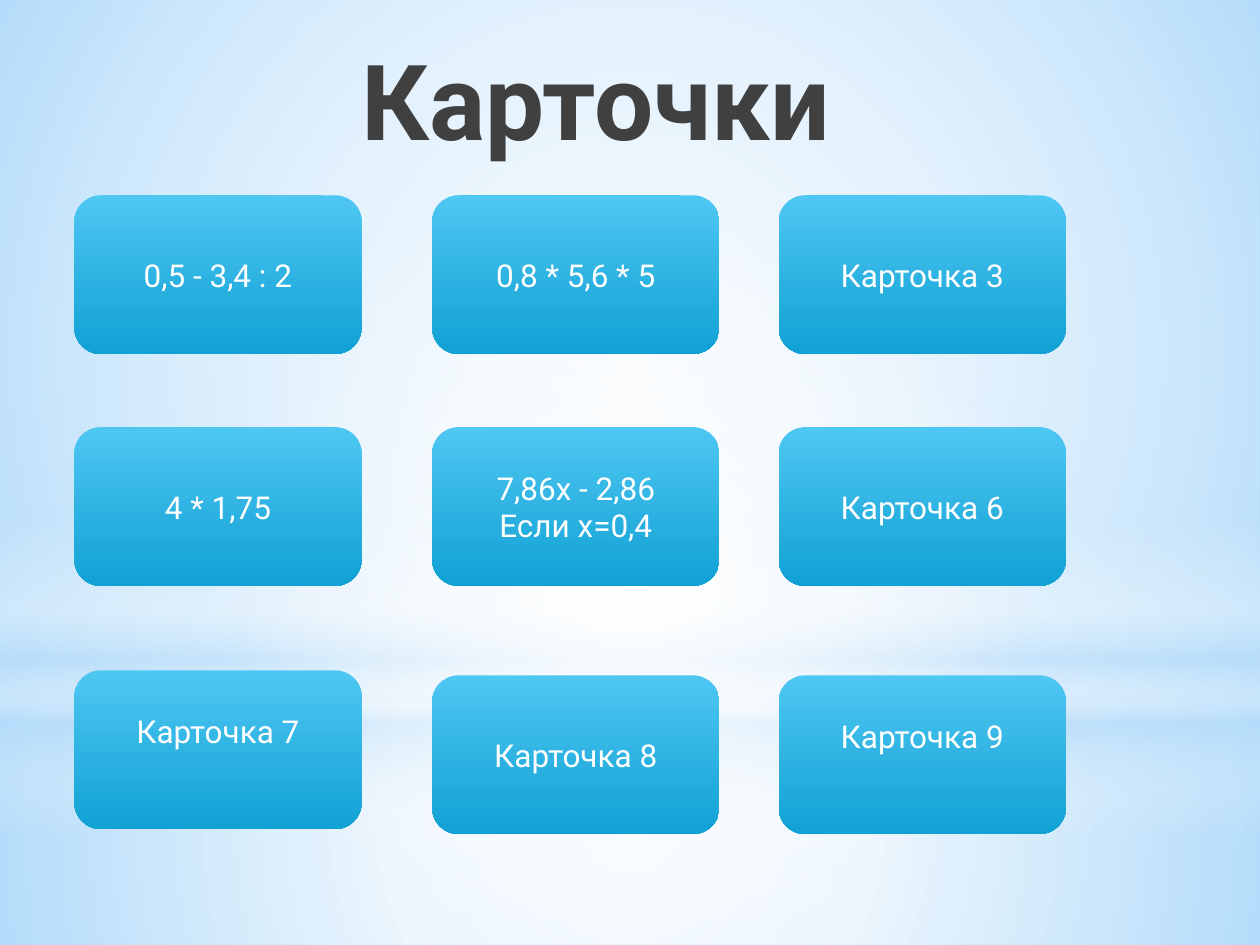
"""Build the slide of nine arithmetic cards on a glowing blue background."""
from dataclasses import dataclass
from typing import Optional

from lxml import etree
from pptx import Presentation
from pptx import util as u
from pptx.dml.color import RGBColor
from pptx.enum import shapes, text
from pptx.oxml.ns import qn


@dataclass(frozen=True)
class Theme:
    font: str = "Roboto"
    title_size: int = 60
    card_size: int = 18
    sky: str = "B4DCFA"
    white: str = "FFFFFF"
    title: str = "404040"
    card_top: str = "4EC7F2"
    card_bottom: str = "11A1D4"


@dataclass(frozen=True)
class Stop:
    position: int
    color: str
    opacity: int = 100


@dataclass(frozen=True)
class Gradient:
    stops: tuple[Stop, ...]
    angle: Optional[int] = None


@dataclass(frozen=True)
class Box:
    left: float
    top: float
    width: float
    height: float

    def lengths(self) -> tuple[u.Length, ...]:
        return tuple(u.Inches(n) for n in (self.left, self.top, self.width, self.height))


@dataclass(frozen=True)
class Glow:
    box: Box
    gradient: Gradient
    outline: shapes.MSO_SHAPE = shapes.MSO_SHAPE.RECTANGLE


@dataclass(frozen=True)
class Card:
    wording: str
    lift: float = 0
    bottom_inset: float = 0.05


THEME = Theme()
CARD_FILL = Gradient((Stop(0, THEME.card_top), Stop(100, THEME.card_bottom)), 90)
GLOWS = (
    Glow(Box(0, 5.58, 10, 1.92), Gradient((
        Stop(0, THEME.white, 91), Stop(37, THEME.white, 76), Stop(100, THEME.sky, 79)))),
    Glow(Box(0, 0, 10, 5.58), Gradient((
        Stop(0, THEME.white, 89), Stop(48, THEME.white, 62), Stop(100, THEME.sky, 79)))),
    Glow(Box(0, 4.12, 10, 2.5), Gradient((
        Stop(0, THEME.white, 0), Stop(29, THEME.white, 30), Stop(45, THEME.sky, 40),
        Stop(55, THEME.white, 26), Stop(65, THEME.sky, 60), Stop(100, THEME.white, 0)), 90)),
    Glow(Box(0, 1.75, 10, 5.58), Gradient((
        Stop(0, THEME.white), Stop(56, THEME.white, 0))), shapes.MSO_SHAPE.OVAL),
)
COLUMNS = (0.59, 3.43, 6.18)
ROWS = (1.55, 3.39, 5.36)
CARDS = (
    (Card("0,5 - 3,4 : 2"), Card("0,8 * 5,6 * 5"), Card("Карточка 3")),
    (Card("4 * 1,75"), Card("7,86x - 2,86\nЕсли x=0,4"), Card("Карточка 6")),
    (Card("Карточка 7", 0.04, 0.35), Card("Карточка 8"), Card("Карточка 9", 0, 0.35)),
)


def apply_gradient(shape, gradient: Gradient) -> None:
    shape.fill.gradient()
    fill = shape._element.spPr.find(qn("a:gradFill"))
    fill.clear()
    fill.set("rotWithShape", "1")
    stop_list = etree.SubElement(fill, qn("a:gsLst"))
    for stop in gradient.stops:
        entry = etree.SubElement(stop_list, qn("a:gs"), pos=str(stop.position * 1000))
        color = etree.SubElement(entry, qn("a:srgbClr"), val=stop.color)
        if stop.opacity < 100:
            etree.SubElement(color, qn("a:alpha"), val=str(stop.opacity * 1000))
    if gradient.angle is None:
        radial = etree.SubElement(fill, qn("a:path"), path="circle")
        etree.SubElement(radial, qn("a:fillToRect"),
                         {side: "50000" for side in "ltrb"})
    else:
        etree.SubElement(fill, qn("a:lin"), ang=str(gradient.angle * 60000), scaled="0")


def add_panel(slide, outline: shapes.MSO_SHAPE, box: Box, gradient: Gradient):
    panel = slide.shapes.add_shape(outline, *box.lengths())
    panel.shadow.inherit = False
    panel.line.fill.background()
    apply_gradient(panel, gradient)
    return panel


def write(frame, wording: str, size: int, color: str, bottom_inset: float,
          bold: bool = False) -> None:
    frame.word_wrap = True
    frame.vertical_anchor = text.MSO_ANCHOR.MIDDLE
    frame.margin_bottom = u.Inches(bottom_inset)
    frame.text = wording
    for paragraph in frame.paragraphs:
        paragraph.alignment = text.PP_ALIGN.CENTER
        paragraph.font.name = THEME.font
        paragraph.font.size = u.Pt(size)
        paragraph.font.bold = bold
        paragraph.font.color.rgb = RGBColor.from_string(color)


def add_card(slide, card: Card, left: float, top: float) -> None:
    panel = add_panel(slide, shapes.MSO_SHAPE.ROUNDED_RECTANGLE,
                      Box(left, top - card.lift, 2.28, 1.26), CARD_FILL)
    write(panel.text_frame, card.wording, THEME.card_size, THEME.white, card.bottom_inset)


def main() -> None:
    deck = Presentation()
    deck.slide_width, deck.slide_height = u.Inches(10), u.Inches(7.5)
    slide = deck.slides.add_slide(deck.slide_layouts[6])
    backdrop = slide.background.fill
    backdrop.solid()
    backdrop.fore_color.rgb = RGBColor.from_string(THEME.sky)
    for glow in GLOWS:
        add_panel(slide, glow.outline, glow.box, glow.gradient)
    heading = slide.shapes.add_textbox(*Box(0.83, 0.18, 7.8, 1.34).lengths())
    write(heading.text_frame, "Карточки", THEME.title_size, THEME.title, 0.18, bold=True)
    for top, row in zip(ROWS, CARDS):
        for left, card in zip(COLUMNS, row):
            add_card(slide, card, left, top)
    deck.save("out.pptx")


if __name__ == "__main__":
    main()
